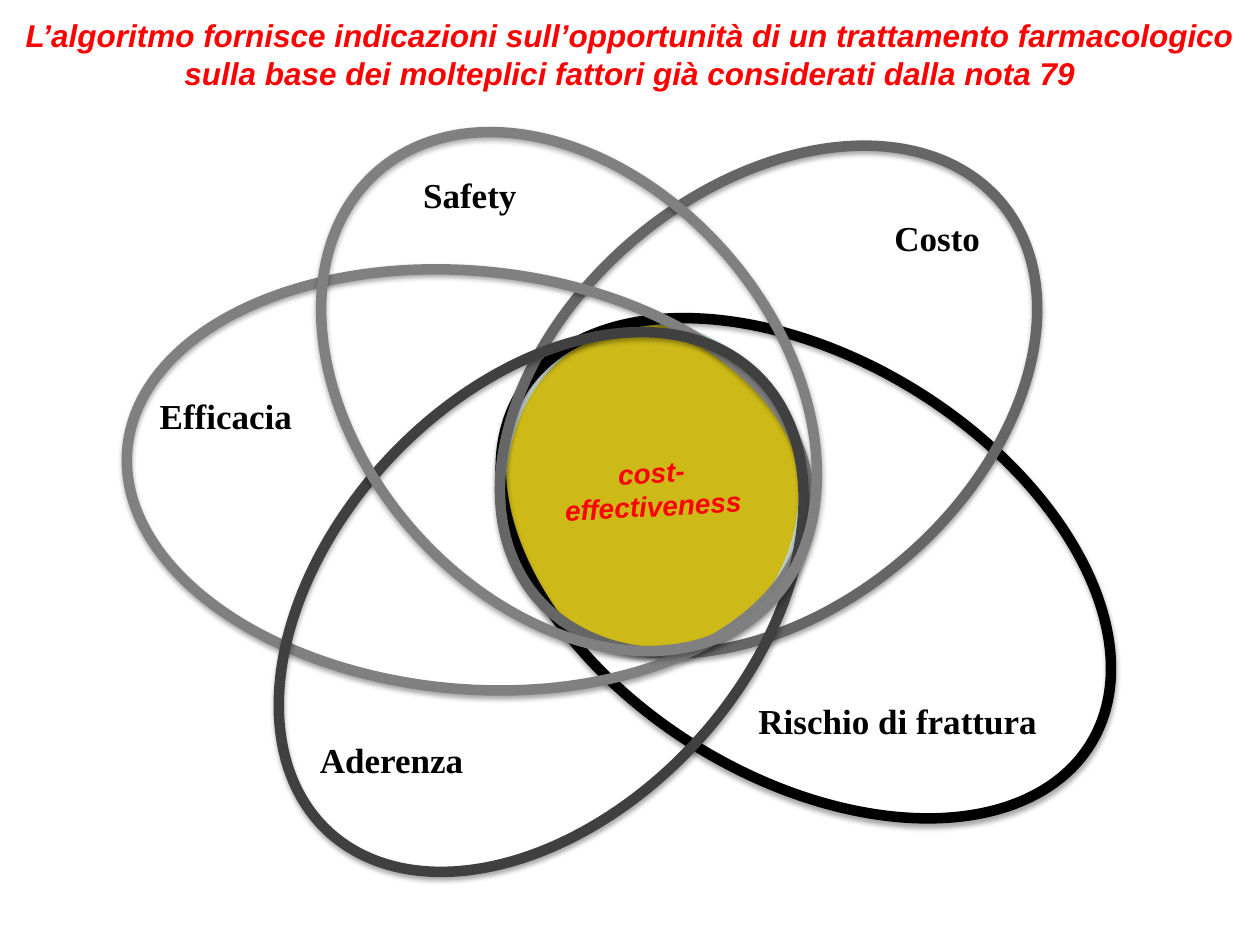
from lxml.etree import SubElement
from pptx import Presentation
from pptx.dml.color import RGBColor
from pptx.enum.shapes import MSO_SHAPE
from pptx.enum.text import MSO_ANCHOR, PP_ALIGN
from pptx.oxml.ns import qn
from pptx.util import Cm, Pt

BLACK = RGBColor(0x00, 0x00, 0x00)
CHARCOAL = RGBColor(0x40, 0x40, 0x40)
DARK_GREY = RGBColor(0x66, 0x66, 0x66)
GREY = RGBColor(0x80, 0x80, 0x80)
RED = RGBColor(0xFF, 0x00, 0x00)
GOLD = RGBColor(0xCD, 0xB9, 0x18)
PALE_BLUE = RGBColor(0xB6, 0xDC, 0xDF)

RING_HEIGHT = 8.43
LABEL_HEIGHT = 1.12


def write_text(shape, text, font="Times New Roman", size=20, color=BLACK,
               italic=False, align=PP_ALIGN.LEFT, anchor=MSO_ANCHOR.TOP):
    frame = shape.text_frame
    frame.word_wrap = True
    frame.vertical_anchor = anchor
    para = frame.paragraphs[0]
    para.alignment = align
    span = para.add_run()
    span.text = text
    span.font.name = font
    span.font.size = Pt(size)
    span.font.bold = True
    span.font.italic = italic
    span.font.color.rgb = color


def add_ellipse(page, left, top, width, height, rotation, line, weight, fill=None):
    ellipse = page.shapes.add_shape(
        MSO_SHAPE.OVAL, Cm(left), Cm(top), Cm(width), Cm(height))
    ellipse.rotation = rotation
    if fill is None:
        ellipse.fill.background()
    else:
        ellipse.fill.solid()
        ellipse.fill.fore_color.rgb = fill
    ellipse.line.color.rgb = line
    ellipse.line.width = Pt(weight)
    # Soft shadow straight below the outline
    ellipse.shadow.inherit = False
    effects = ellipse._element.spPr.find(qn("a:effectLst"))
    shadow = SubElement(effects, qn("a:outerShdw"), blurRad=str(Pt(3.1)),
                        dist=str(Pt(1.8)), dir="5400000", rotWithShape="0")
    tint = SubElement(shadow, qn("a:srgbClr"), val="000000")
    SubElement(tint, qn("a:alpha"), val="35000")
    return ellipse


deck = Presentation()
deck.slide_width, deck.slide_height = Cm(25.4), Cm(19.05)
page = deck.slides.add_slide(deck.slide_layouts[6])

# Core where all the factors overlap
core = add_ellipse(page, 10.19, 6.53, 5.92, 6.65, 356.9, PALE_BLUE, 0.75, GOLD)
write_text(core, "cost-effectiveness", font="Arial", size=16, color=RED,
           italic=True, align=PP_ALIGN.CENTER, anchor=MSO_ANCHOR.MIDDLE)

# Factors: ring (left, top, width, rotation, colour), label (left, top, width)
factors = [
    ("Rischio di frattura", (9.5, 7.24, 13.49, 31.7, BLACK), (15.04, 13.97, 7.59)),
    ("Costo", (9.35, 3.84, 12.29, 319.5, DARK_GREY), (17.78, 4.24, 4.67)),
    ("Efficacia", (2.54, 5.46, 13.79, 5.3, GREY), (2.97, 7.82, 4.24)),
    ("Aderenza", (4.6, 7.92, 12.62, 132.9, CHARCOAL), (6.2, 14.76, 7.59)),
    ("Safety", (5.59, 3.68, 11.76, 49.1, GREY), (8.28, 3.38, 2.97)),
]
for name, (left, top, width, rotation, color), label in factors:
    add_ellipse(page, left, top, width, RING_HEIGHT, rotation, color, 6)
    label_left, label_top, label_width = label
    box = page.shapes.add_textbox(
        Cm(label_left), Cm(label_top), Cm(label_width), Cm(LABEL_HEIGHT))
    write_text(box, name, align=PP_ALIGN.JUSTIFY)

# Title
title = page.shapes.add_textbox(Cm(0), Cm(0.2), deck.slide_width, Cm(1.8))
write_text(title, "L’algoritmo fornisce indicazioni sull’opportunità di un "
           "trattamento farmacologico sulla base dei molteplici fattori già "
           "considerati dalla nota 79",
           font="Arial", size=18, color=RED, italic=True, align=PP_ALIGN.CENTER)

deck.save("out.pptx")
